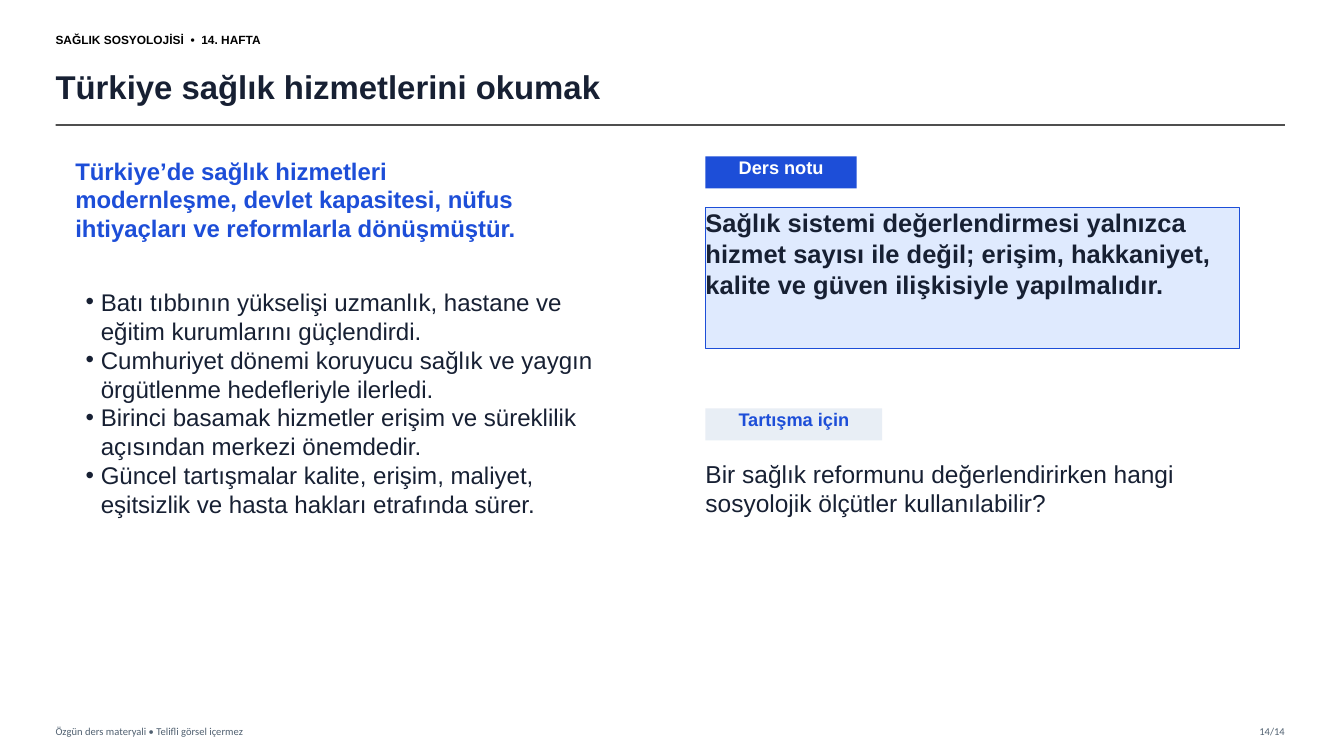
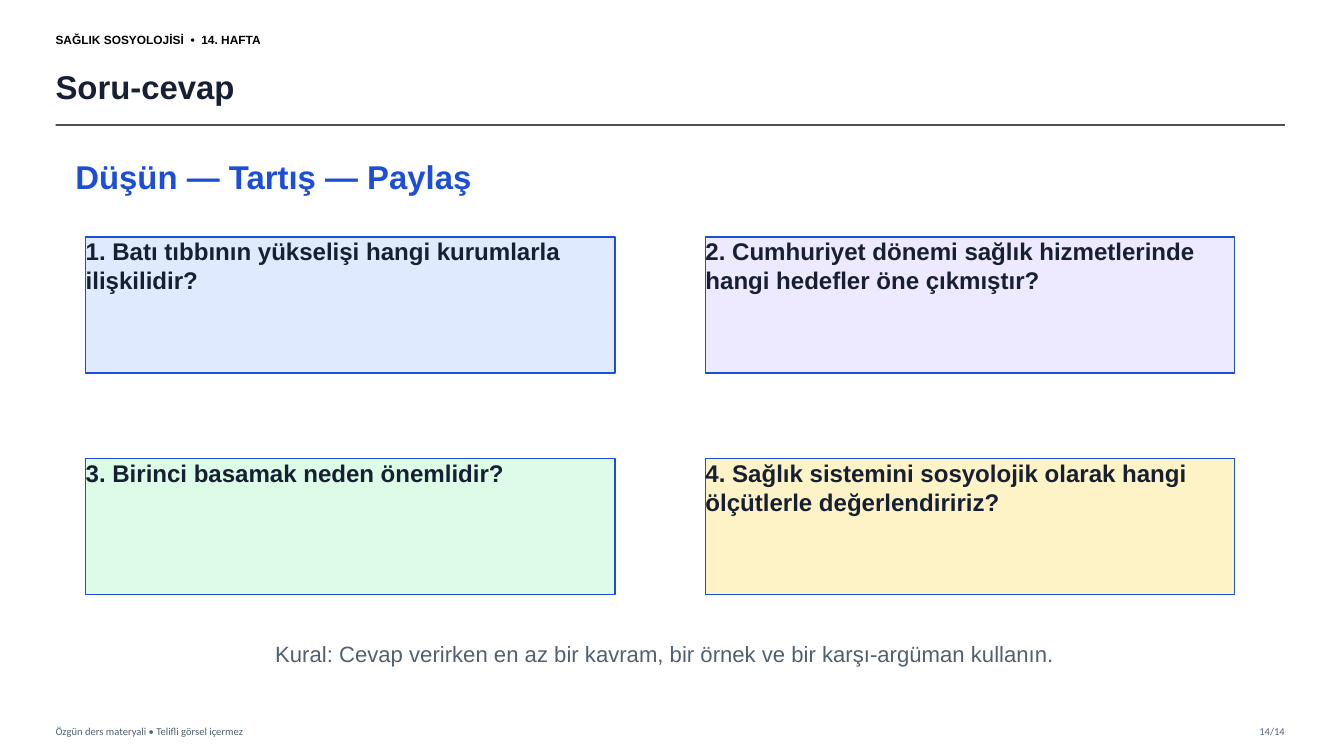
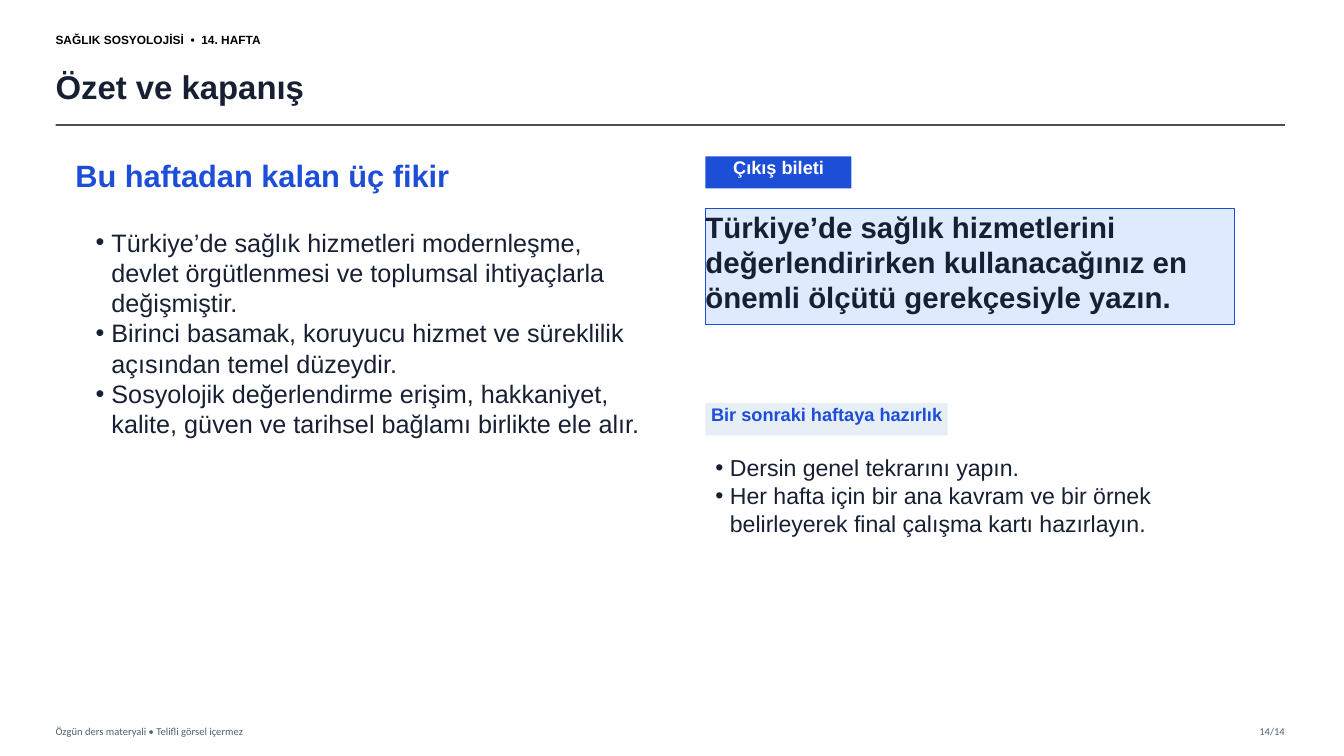
from lxml import etree
from pptx import Presentation
from pptx.dml.color import RGBColor
from pptx.enum.shapes import MSO_CONNECTOR, MSO_SHAPE
from pptx.enum.text import MSO_ANCHOR, PP_ALIGN
from pptx.oxml.ns import qn
from pptx.util import Cm, Pt

LEFT, CENTER, RIGHT = PP_ALIGN.LEFT, PP_ALIGN.CENTER, PP_ALIGN.RIGHT
TOP, MIDDLE = MSO_ANCHOR.TOP, MSO_ANCHOR.MIDDLE
RECT, STRAIGHT = MSO_SHAPE.RECTANGLE, MSO_CONNECTOR.STRAIGHT

COLORS = {
    "black": "000000", "ink": "172033", "muted": "506070", "rule": "333333",
    "blue": "1D4ED8", "white": "FFFFFF", "mist": "E8EEF5",
    "sky": "DFEAFE", "violet": "EDE9FE", "green": "DCFCE7", "amber": "FEF3C7",
}
HEAD_FONT, FOOT_FONT = "Arial", "Calibri"

# Shared positions in cm
MARGIN, RIGHT_EDGE = 1.4, 32.38
LEAD_LEFT, COL_LEFT, COL_RIGHT = 1.9, 2.16, 17.78
BODY_TOP, CARD_W, TAG_H = 3.94, 13.34, 0.81


def rgb(name):
    return RGBColor.from_string(COLORS[name])


# Text
def add_bullet(p, size):
    pPr = p._p.get_or_add_pPr()
    hang = Pt(0.63 * size)
    pPr.set("marL", str(hang))
    pPr.set("indent", str(-hang))
    etree.SubElement(pPr, qn("a:buFont"), typeface=HEAD_FONT)
    etree.SubElement(pPr, qn("a:buChar"), char="•")


def write(sp, lines, size, color="ink", bold=False, align=LEFT, anchor=TOP,
          font=HEAD_FONT, bullets=False):
    tf = sp.text_frame
    tf.word_wrap = True
    tf.vertical_anchor = anchor
    tf.margin_left = tf.margin_right = tf.margin_top = tf.margin_bottom = 0
    for i, line in enumerate(lines):
        p = tf.add_paragraph() if i else tf.paragraphs[0]
        p.alignment = align
        if bullets:
            add_bullet(p, size)
        r = p.add_run()
        r.text = line
        r.font.name = font
        r.font.size = Pt(size)
        r.font.bold = bold
        r.font.color.rgb = rgb(color)


def add_text(s, box, text, size, **style):
    sp = s.shapes.add_textbox(*map(Cm, box))
    write(sp, [text], size, **style)


def add_bullets(s, box, lines, size):
    sp = s.shapes.add_textbox(*map(Cm, box))
    write(sp, lines, size, bullets=True)


# Filled boxes
def add_box(s, box, fill, border=None):
    sp = s.shapes.add_shape(RECT, *map(Cm, box))
    sp.shadow.inherit = False
    sp.fill.solid()
    sp.fill.fore_color.rgb = rgb(fill)
    if border:
        sp.line.color.rgb = rgb(border)
        sp.line.width = Pt(1)
    else:
        sp.line.fill.background()
    return sp


def add_card(s, box, text, size, fill="sky"):
    write(add_box(s, box, fill, "blue"), [text], size, bold=True)


def add_tag(s, top, width, text, fill="blue", color="white"):
    sp = add_box(s, (COL_RIGHT, top, width, TAG_H), fill)
    write(sp, [text], 13, color=color, bold=True, align=CENTER)


# Frame shared by all slides
def add_rule(s, top):
    ln = s.shapes.add_connector(STRAIGHT, Cm(MARGIN), Cm(top), Cm(RIGHT_EDGE), Cm(top))
    ln.line.color.rgb = rgb("rule")
    ln.line.width = Pt(1.2)
    etree.SubElement(ln._element.spPr, qn("a:effectLst"))
    clr = ln._element.spPr.find(".//" + qn("a:srgbClr"))
    etree.SubElement(clr, qn("a:alpha"), val="85000")


def new_slide(prs, title):
    s = prs.slides.add_slide(prs.slide_layouts[6])
    add_text(s, (MARGIN, 0.64, 9.14, 0.71), "SAĞLIK SOSYOLOJİSİ  •  14. HAFTA", 8.5,
             color="black", bold=True, anchor=MIDDLE)
    add_text(s, (MARGIN, 1.47, 30.35, 1.4), title, 23.5, bold=True, anchor=MIDDLE)
    add_rule(s, 3.15)
    foot = {"color": "muted", "font": FOOT_FONT, "anchor": MIDDLE}
    add_text(s, (MARGIN, 18.14, 15.24, 0.56),
             "Özgün ders materyali • Telifli görsel içermez", 7.5, **foot)
    add_text(s, (RIGHT_EDGE - 1.65, 18.14, 1.65, 0.56), "14/14", 7.5, align=RIGHT, **foot)
    return s


def add_lead(s, width, height, text, size):
    add_text(s, (LEAD_LEFT, BODY_TOP, width, height), text, size, color="blue", bold=True)


# Slides
def services_slide(prs):
    s = new_slide(prs, "Türkiye sağlık hizmetlerini okumak")
    add_lead(s, 11.68, 2.54, "Türkiye’de sağlık hizmetleri modernleşme, devlet kapasitesi, "
             "nüfus ihtiyaçları ve reformlarla dönüşmüştür.", 17.1)
    add_bullets(s, (COL_LEFT, 7.24, CARD_W, 6.86), [
        "Batı tıbbının yükselişi uzmanlık, hastane ve eğitim kurumlarını güçlendirdi.",
        "Cumhuriyet dönemi koruyucu sağlık ve yaygın örgütlenme hedefleriyle ilerledi.",
        "Birinci basamak hizmetler erişim ve süreklilik açısından merkezi önemdedir.",
        "Güncel tartışmalar kalite, erişim, maliyet, eşitsizlik ve hasta hakları "
        "etrafında sürer.",
    ], 17.2)
    add_tag(s, BODY_TOP, 3.81, "Ders notu")
    add_card(s, (COL_RIGHT, 5.23, 13.46, 3.56),
             "Sağlık sistemi değerlendirmesi yalnızca hizmet sayısı ile değil; erişim, "
             "hakkaniyet, kalite ve güven ilişkisiyle yapılmalıdır.", 18.2)
    add_tag(s, 10.29, 4.45, "Tartışma için", "mist", "blue")
    add_text(s, (COL_RIGHT, 11.56, 13.46, 3.18),
             "Bir sağlık reformunu değerlendirirken hangi sosyolojik ölçütler "
             "kullanılabilir?", 17.5)


def questions_slide(prs):
    s = new_slide(prs, "Soru-cevap")
    add_lead(s, 14.48, 1.27, "Düşün — Tartış — Paylaş", 23.5)
    questions = [
        ("1. Batı tıbbının yükselişi hangi kurumlarla ilişkilidir?", "sky"),
        ("2. Cumhuriyet dönemi sağlık hizmetlerinde hangi hedefler öne çıkmıştır?", "violet"),
        ("3. Birinci basamak neden önemlidir?", "green"),
        ("4. Sağlık sistemini sosyolojik olarak hangi ölçütlerle değerlendiririz?", "amber"),
    ]
    for i, (question, fill) in enumerate(questions):
        row, col = divmod(i, 2)
        left = (COL_LEFT, COL_RIGHT)[col]
        add_card(s, (left, 5.97 + 5.59 * row, CARD_W, 3.43), question, 17.2, fill)
    add_text(s, (2.54, 16.13, 28.45, 0.89),
             "Kural: Cevap verirken en az bir kavram, bir örnek ve bir karşı-argüman "
             "kullanın.", 15.8, color="muted", align=CENTER)


def summary_slide(prs):
    s = new_slide(prs, "Özet ve kapanış")
    add_lead(s, 13.72, 1.14, "Bu haftadan kalan üç fikir", 22)
    add_bullets(s, (2.41, 5.72, 13.97, 6.1), [
        "Türkiye’de sağlık hizmetleri modernleşme, devlet örgütlenmesi ve toplumsal "
        "ihtiyaçlarla değişmiştir.",
        "Birinci basamak, koruyucu hizmet ve süreklilik açısından temel düzeydir.",
        "Sosyolojik değerlendirme erişim, hakkaniyet, kalite, güven ve tarihsel bağlamı "
        "birlikte ele alır.",
    ], 18)
    add_tag(s, BODY_TOP, 3.68, "Çıkış bileti")
    add_card(s, (COL_RIGHT, 5.26, CARD_W, 2.92),
             "Türkiye’de sağlık hizmetlerini değerlendirirken kullanacağınız en önemli "
             "ölçütü gerekçesiyle yazın.", 21)
    add_tag(s, 10.16, 6.1, "Bir sonraki haftaya hazırlık", "mist", "blue")
    add_bullets(s, (18.03, 11.43, 13.21, 3.43), [
        "Dersin genel tekrarını yapın.",
        "Her hafta için bir ana kavram ve bir örnek belirleyerek final çalışma kartı "
        "hazırlayın.",
    ], 16.5)


def main():
    prs = Presentation()
    prs.slide_width, prs.slide_height = Cm(33.87), Cm(19.05)
    services_slide(prs)
    questions_slide(prs)
    summary_slide(prs)
    prs.save("out.pptx")


if __name__ == "__main__":
    main()
